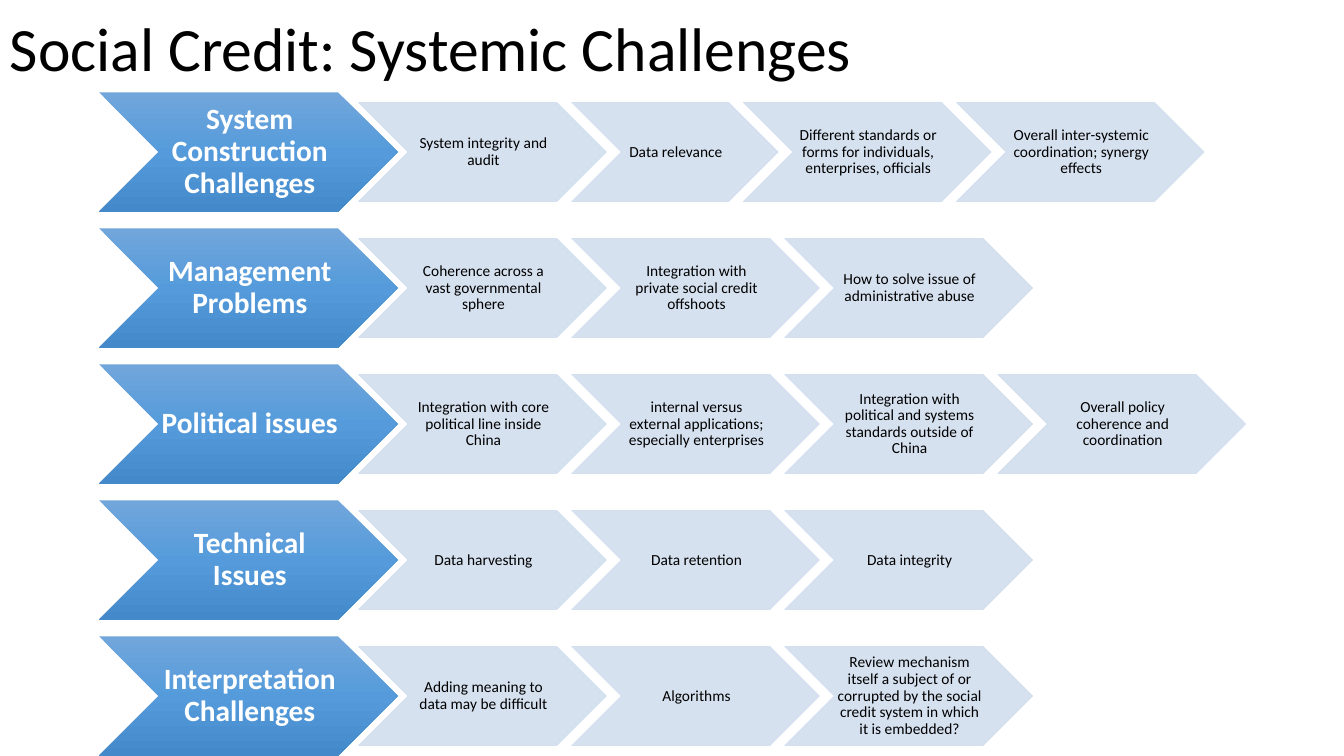
"""Build the slide of systemic challenges as rows of chevrons."""
from copy import deepcopy
from dataclasses import dataclass

from pptx import Presentation
from pptx.dml.color import RGBColor
from pptx.enum.shapes import MSO_SHAPE
from pptx.enum.text import MSO_ANCHOR, PP_ALIGN
from pptx.oxml.ns import qn
from pptx.oxml.xmlchemy import OxmlElement
from pptx.util import Pt

CHEVRON = MSO_SHAPE.CHEVRON
MIDDLE = MSO_ANCHOR.MIDDLE
LEFT, CENTER = PP_ALIGN.LEFT, PP_ALIGN.CENTER


@dataclass(frozen=True)
class Theme:
    font: str = "Calibri"
    dark: str = "000000"
    light: str = "FFFFFF"
    pale: str = "D2DEEF"
    pale_alpha: int = 90000
    gradient: tuple = ("71A6DB", "559BDB", "448ACA")
    title_size: int = 44
    heading_size: int = 21
    detail_size: int = 11


SLIDE_WIDTH, SLIDE_HEIGHT = 960, 540
ROW_TOP, ROW_PITCH = 66, 97.14
HEADING_LEFT, HEADING_WIDTH, HEADING_HEIGHT = 70.8, 213.2, 85.2
DETAIL_LEFT, DETAIL_WIDTH, DETAIL_HEIGHT = 256.2, 177, 70.8
NARROW_WIDTH, OVERLAP = 147.4, 24.8
NARROW_DETAIL = "Data relevance"

ROWS = (
    ("System Construction Challenges", (
        "System integrity and audit",
        NARROW_DETAIL,
        "Different standards or forms for individuals, enterprises, officials",
        "Overall inter-systemic coordination; synergy effects")),
    ("Management Problems", (
        "Coherence across a vast governmental sphere",
        "Integration with private social credit offshoots",
        "How to solve issue of administrative abuse")),
    ("Political issues", (
        "Integration with core political line inside China",
        "internal versus external applications; especially enterprises",
        "Integration with political and systems standards outside of China",
        "Overall policy coherence and coordination")),
    ("Technical Issues", (
        "Data harvesting",
        "Data retention",
        "Data integrity")),
    ("Interpretation Challenges", (
        "Adding meaning to data may be difficult",
        "Algorithms",
        "Review mechanism itself a subject of or corrupted by the social "
        "credit system in which it is embedded?")),
)


class SlideBuilder:
    """Draw the titles and chevrons of one slide in one theme."""

    def __init__(self, slide, theme):
        self.slide = slide
        self.theme = theme

    def label(self, shape, text, size, color, bold=False, align=CENTER, insets=None):
        frame = shape.text_frame
        frame_format = {"word_wrap": True, "vertical_anchor": MIDDLE}
        if insets:
            sides = ("margin_left", "margin_top", "margin_right", "margin_bottom")
            frame_format.update(zip(sides, map(Pt, insets)))
        for name, value in frame_format.items():
            setattr(frame, name, value)
        paragraph = frame.paragraphs[0]
        paragraph.alignment = align
        paragraph.line_spacing = 0.9
        run = paragraph.add_run()
        run.text = text
        font_format = {"name": self.theme.font, "size": Pt(size), "bold": bold}
        for name, value in font_format.items():
            setattr(run.font, name, value)
        run.font.color.rgb = RGBColor.from_string(color)

    def title(self, text, *box):
        shape = self.slide.shapes.add_textbox(*map(Pt, box))
        self.label(shape, text, self.theme.title_size, self.theme.dark, align=LEFT)

    def chevron(self, *box):
        shape = self.slide.shapes.add_shape(CHEVRON, *map(Pt, box))
        shape.shadow.inherit = False
        return shape

    def heading(self, text, *box):
        shape = self.chevron(*box)
        shape.line.fill.background()
        shape.fill.gradient()
        shape.fill.gradient_angle = 270
        stop_list = shape.element.spPr.find(qn("a:gradFill")).find(qn("a:gsLst"))
        stop_list.insert(1, deepcopy(stop_list[0]))
        colors = self.theme.gradient
        for index, (stop, color) in enumerate(zip(shape.fill.gradient_stops, colors)):
            stop.color.rgb = RGBColor.from_string(color)
            stop.position = index / (len(colors) - 1)
        self.label(shape, text, self.theme.heading_size, self.theme.light,
                   bold=True, insets=(2, 1, 0, 1))

    def detail(self, text, *box):
        shape = self.chevron(*box)
        shape.line.width = Pt(0.5)
        shape.fill.solid()
        shape.line.fill.solid()
        for fill in (shape.fill, shape.line.fill):
            fill.fore_color.rgb = RGBColor.from_string(self.theme.pale)
        for color in shape.element.spPr.iter(qn("a:srgbClr")):
            alpha = OxmlElement("a:alpha")
            alpha.set("val", str(self.theme.pale_alpha))
            color.append(alpha)
        self.label(shape, text, self.theme.detail_size, self.theme.dark,
                   insets=(1.4, 0.7, 0, 0.7))


def main():
    presentation = Presentation()
    presentation.slide_width = Pt(SLIDE_WIDTH)
    presentation.slide_height = Pt(SLIDE_HEIGHT)
    slide = presentation.slides.add_slide(presentation.slide_layouts[6])
    builder = SlideBuilder(slide, Theme())
    builder.title("Social Credit: Systemic Challenges", 0, 0, 867, 74)
    for index, (heading, details) in enumerate(ROWS):
        top = ROW_TOP + index * ROW_PITCH
        builder.heading(heading, HEADING_LEFT, top, HEADING_WIDTH, HEADING_HEIGHT)
        left = DETAIL_LEFT
        detail_top = top + (HEADING_HEIGHT - DETAIL_HEIGHT) / 2
        for detail in details:
            width = NARROW_WIDTH if detail == NARROW_DETAIL else DETAIL_WIDTH
            builder.detail(detail, left, detail_top, width, DETAIL_HEIGHT)
            left += width - OVERLAP
    presentation.save("out.pptx")


if __name__ == "__main__":
    main()
